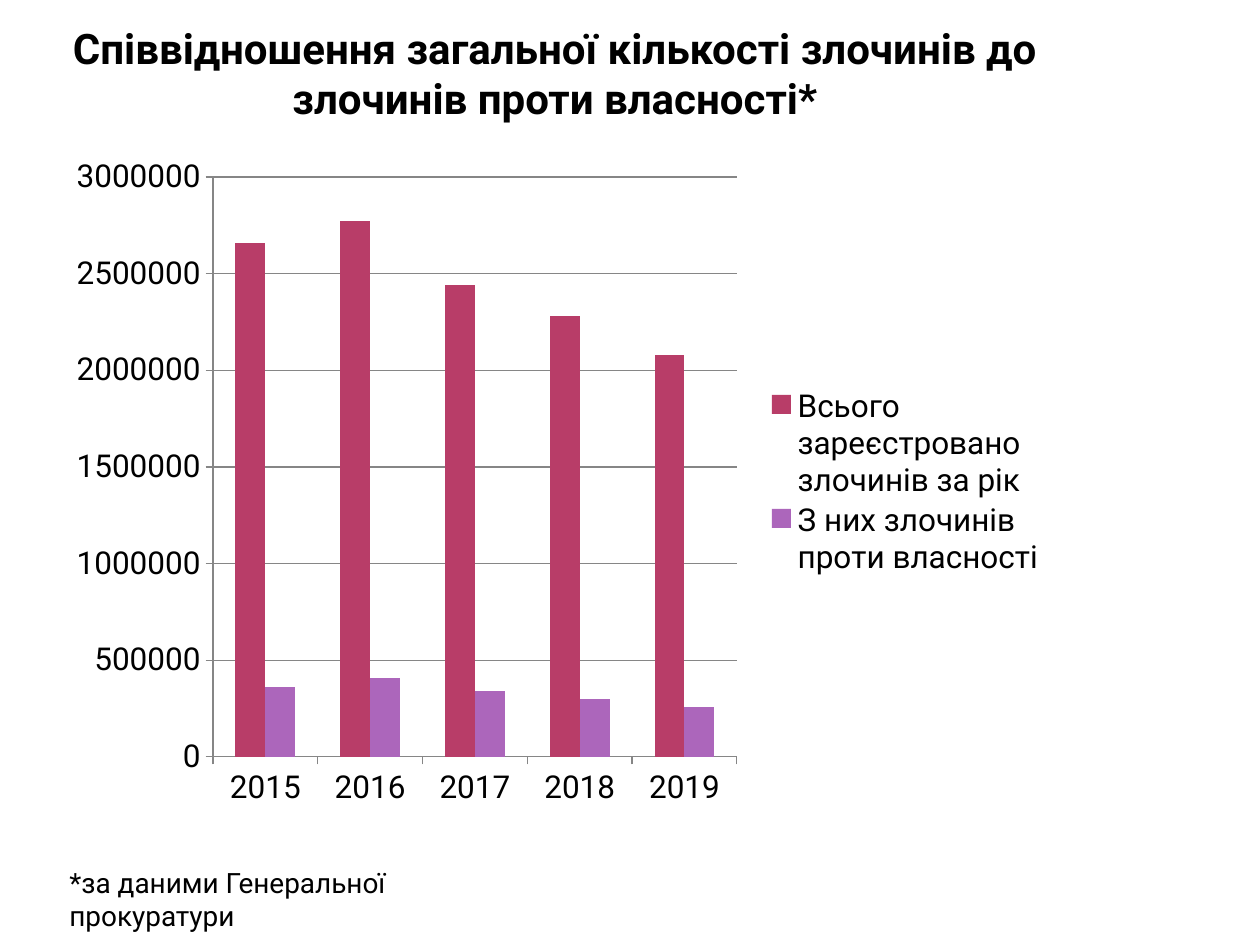
import pptx
import pptx.util
import pptx.chart.data
import pptx.enum.chart
import pptx.enum.text
import pptx.dml.color
import pptx.oxml
import pptx.oxml.ns

TITLE = "Співвідношення загальної кількості злочинів до злочинів проти власності*"
FOOTNOTE = "*за даними Генеральної прокуратури"
YEARS = ["2015", "2016", "2017", "2018", "2019"]
SERIES = [
    ("Всього зареєстровано злочинів за рік", "total",
     [2660000, 2770000, 2440000, 2280000, 2080000]),
    ("З них злочинів проти власності", "property",
     [360000, 410000, 340000, 300000, 260000]),
]
COLORS = {"text": "000000", "total": "B83D68", "property": "AC66BB", "axis": "868686"}
FONT = "Roboto"

# Boxes in px: left, top, width, height
SLIDE_SIZE = (1260, 945)
TITLE_BOX = (44, 16, 1022, 115)
CHART_BOX = (57, 145, 998, 674)
PLOT_BOX = (213, 177, 524, 580)
LEGEND_BOX = (760, 385, 290, 195)
FOOTNOTE_BOX = (57, 859, 500, 80)


def px(value):
    return pptx.util.Emu(round(value * 914400 / 126))


def color(name):
    return pptx.dml.color.RGBColor.from_string(COLORS[name])


def style_font(font, size, bold=False):
    font.name = FONT
    font.size = pptx.util.Pt(size)
    font.bold = bold
    font.color.rgb = color("text")


def add_text(slide, box, text, size, align, bold=False):
    frame = slide.shapes.add_textbox(*map(px, box)).text_frame
    frame.word_wrap = True
    frame.text = text
    paragraph = frame.paragraphs[0]
    paragraph.alignment = align
    style_font(paragraph.runs[0].font, size, bold)


def manual_layout(box, inner=False):
    """Place a chart part by its share of the chart box."""
    left, top, width, height = CHART_BOX
    shares = {"x": (box[0] - left) / width, "y": (box[1] - top) / height,
              "w": box[2] / width, "h": box[3] / height}
    target = '<c:layoutTarget val="inner"/>' if inner else ""
    modes = '<c:xMode val="edge"/><c:yMode val="edge"/>'
    places = "".join(f'<c:{key} val="{share:.4f}"/>' for key, share in shares.items())
    return pptx.oxml.parse_xml(
        f'<c:layout {pptx.oxml.ns.nsdecls("c")}><c:manualLayout>'
        f"{target}{modes}{places}</c:manualLayout></c:layout>")


def set_layout(part, layout, after=None):
    for old in part.findall(pptx.oxml.ns.qn("c:layout")):
        part.remove(old)
    if after is None:
        part.insert(0, layout)
    else:
        part.find(pptx.oxml.ns.qn(after)).addnext(layout)


def add_crime_chart(slide):
    data = pptx.chart.data.CategoryChartData()
    data.categories = YEARS
    for name, _, values in SERIES:
        data.add_series(name, values)
    chart = slide.shapes.add_chart(
        pptx.enum.chart.XL_CHART_TYPE.COLUMN_CLUSTERED, *map(px, CHART_BOX), data).chart
    style_font(chart.font, 18)
    chart.has_title = False

    # Columns
    plot = chart.plots[0]
    plot.gap_width = 150
    plot.overlap = 0
    plot.vary_by_categories = False
    for series, (_, key, _) in zip(plot.series, SERIES):
        series.format.fill.solid()
        series.format.fill.fore_color.rgb = color(key)

    # Axes and gridlines
    value_axis = chart.value_axis
    value_axis.minimum_scale, value_axis.maximum_scale = 0, 3000000
    value_axis.major_unit = 500000
    value_axis.has_major_gridlines = True
    value_axis.tick_labels.number_format = "General"
    value_axis.tick_labels.number_format_is_linked = False
    for axis in (chart.category_axis, value_axis):
        axis.major_tick_mark = pptx.enum.chart.XL_TICK_MARK.OUTSIDE
    for lined in (chart.category_axis, value_axis, value_axis.major_gridlines):
        lined.format.line.color.rgb = color("axis")
        lined.format.line.width = pptx.util.Pt(0.75)

    # Legend and placement
    chart.has_legend = True
    chart.legend.position = pptx.enum.chart.XL_LEGEND_POSITION.RIGHT
    chart.legend.include_in_layout = False
    plot_area = chart.element.find(".//" + pptx.oxml.ns.qn("c:plotArea"))
    legend = chart.element.find(".//" + pptx.oxml.ns.qn("c:legend"))
    set_layout(plot_area, manual_layout(PLOT_BOX, inner=True))
    set_layout(legend, manual_layout(LEGEND_BOX), after="c:legendPos")


def main():
    deck = pptx.Presentation()
    deck.slide_width, deck.slide_height = map(px, SLIDE_SIZE)
    slide = deck.slides.add_slide(deck.slide_layouts[6])
    align = pptx.enum.text.PP_ALIGN
    add_crime_chart(slide)
    add_text(slide, TITLE_BOX, TITLE, 24, align.CENTER, bold=True)
    add_text(slide, FOOTNOTE_BOX, FOOTNOTE, 16, align.LEFT)
    deck.save("out.pptx")


if __name__ == "__main__":
    main()
